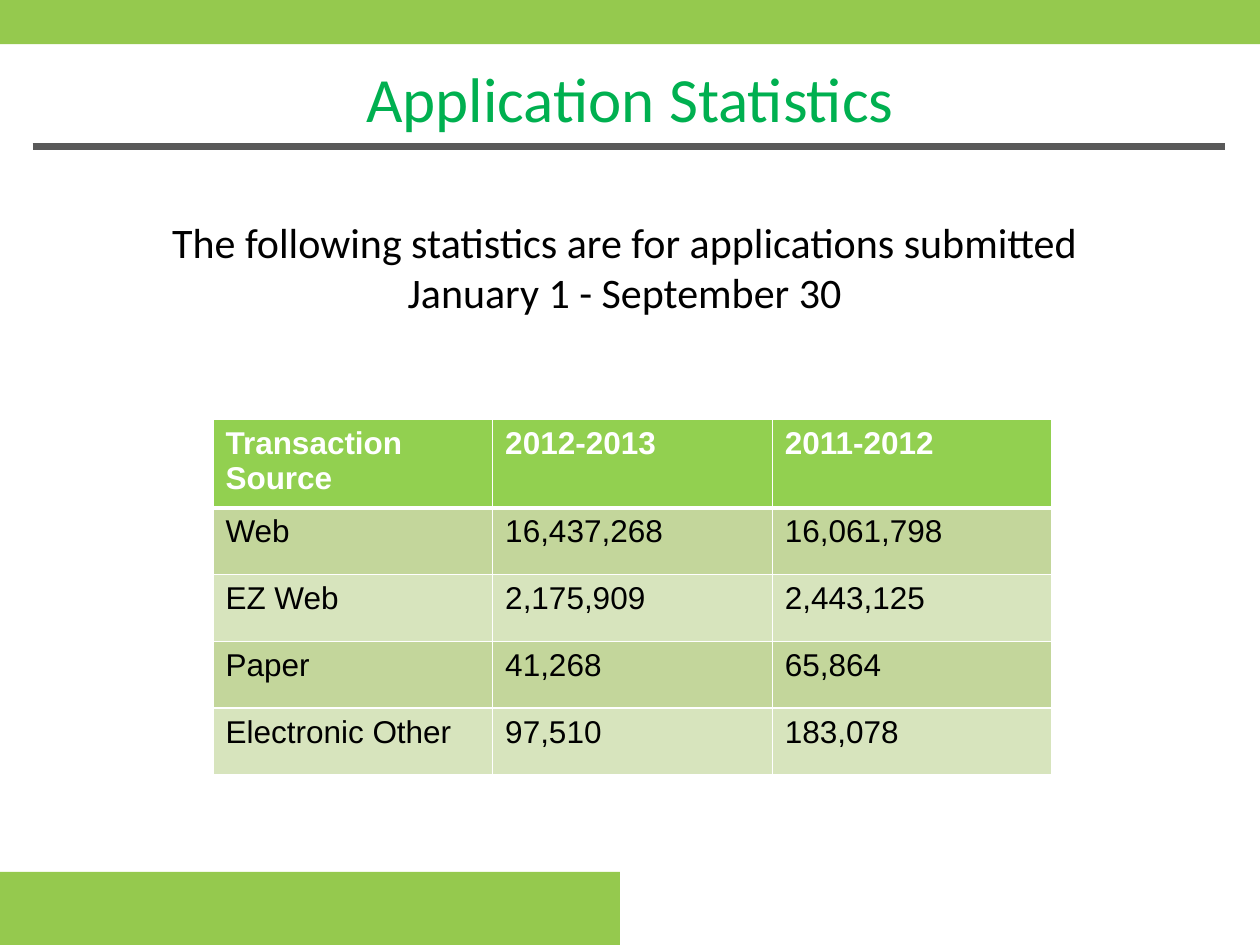
from lxml.etree import SubElement
from pptx import Presentation
from pptx.dml.color import RGBColor
from pptx.enum.shapes import MSO_CONNECTOR, MSO_SHAPE
from pptx.enum.text import MSO_ANCHOR, PP_ALIGN
from pptx.oxml.ns import qn
from pptx.util import Inches, Pt

BAR_GREEN = "95C94E"
BAND_FILLS = ["C3D69B", "D7E4BD"]
TITLE_FORMAT = {"name": "Calibri", "size": Pt(36), "bold": False}
INTRO_FORMAT = {"name": "Calibri", "size": Pt(24), "bold": False}
HEADER_FORMAT = {"name": "Arial", "size": Pt(18), "bold": True}
FIGURE_FORMAT = {**HEADER_FORMAT, "bold": False}

INTRO_LINES = [
    "The following statistics are for applications submitted ",
    "January 1 - September 30 ",
]
STATISTICS = [
    ["Transaction Source", "2012-2013", "2011-2012"],
    ["Web", "16,437,268", "16,061,798"],
    ["EZ Web", "2,175,909", "2,443,125"],
    ["Paper", "41,268", "65,864"],
    ["Electronic Other", "97,510", "183,078"],
]


def color(hex_value):
    return RGBColor.from_string(hex_value)


def box(*lengths):
    return [Inches(length) for length in lengths]


def format_font(font, formats, hex_value):
    for attribute, value in formats.items():
        setattr(font, attribute, value)
    font.color.rgb = color(hex_value)


def add_bar(slide, *place):
    bar = slide.shapes.add_shape(MSO_SHAPE.RECTANGLE, *box(*place))
    bar.shadow.inherit = False
    bar.fill.solid()
    bar.fill.fore_color.rgb = color(BAR_GREEN)
    bar.line.fill.background()


def add_rule(slide, left, right, height):
    rule = slide.shapes.add_connector(
        MSO_CONNECTOR.STRAIGHT, *box(left, height, right, height))
    rule.line.color.rgb = color("595959")
    rule.line.width = Pt(4)
    SubElement(rule._element.spPr, qn("a:effectLst"))


def write_lines(frame, lines, formats, hex_value):
    frame.word_wrap = True
    frame.vertical_anchor = MSO_ANCHOR.TOP
    frame.text = "\n".join(lines)
    for paragraph in frame.paragraphs:
        paragraph.alignment = PP_ALIGN.CENTER
        format_font(paragraph.runs[0].font, formats, hex_value)


def set_title(slide):
    title = slide.shapes.title
    title.left, title.top, title.width, title.height = box(0, 0.42, 10, 1.25)
    write_lines(title.text_frame, ["Application Statistics"],
                TITLE_FORMAT, "00B050")


def add_intro(slide):
    intro = slide.shapes.add_textbox(*box(0.33, 1.67, 9.33, 1.3))
    write_lines(intro.text_frame, INTRO_LINES, INTRO_FORMAT, "000000")


def add_border(cell, side, points):
    border = SubElement(cell._tc.get_or_add_tcPr(), qn(f"a:ln{side}"),
                        w=str(Pt(points)))
    fill = SubElement(border, qn("a:solidFill"))
    SubElement(fill, qn("a:srgbClr"), val="FFFFFF")


def format_cell(cell, row):
    is_header = row == 0
    widths = {"L": 1, "R": 1, "T": 3 if row == 1 else 1,
              "B": 3 if is_header else 1}
    for side, points in widths.items():
        add_border(cell, side, points)
    cell.fill.solid()
    cell.fill.fore_color.rgb = color(
        "92D050" if is_header else BAND_FILLS[(row - 1) % 2])
    format_font(cell.text_frame.paragraphs[0].runs[0].font,
                HEADER_FORMAT if is_header else FIGURE_FORMAT,
                "FFFFFF" if is_header else "000000")


def add_statistics(slide):
    table = slide.shapes.add_table(
        len(STATISTICS), len(STATISTICS[0]),
        *box(1.69, 3.33, 6.67, 2.58)).table
    for column in table.columns:
        column.width = Inches(2.22)
    for row, values in enumerate(STATISTICS):
        table.rows[row].height = Inches(0.53 if row else 0.48)
        for column, value in enumerate(values):
            cell = table.cell(row, column)
            cell.text = value
            format_cell(cell, row)


def main():
    presentation = Presentation()
    presentation.slide_width, presentation.slide_height = box(10, 7.5)
    slide = presentation.slides.add_slide(presentation.slide_layouts[5])
    add_bar(slide, 0, 6.92, 4.92, 0.59)
    add_bar(slide, -0.02, 0, 10.03, 0.35)
    add_rule(slide, 0.26, 9.72, 1.16)
    add_intro(slide)
    set_title(slide)
    add_statistics(slide)
    presentation.save("out.pptx")


if __name__ == "__main__":
    main()
